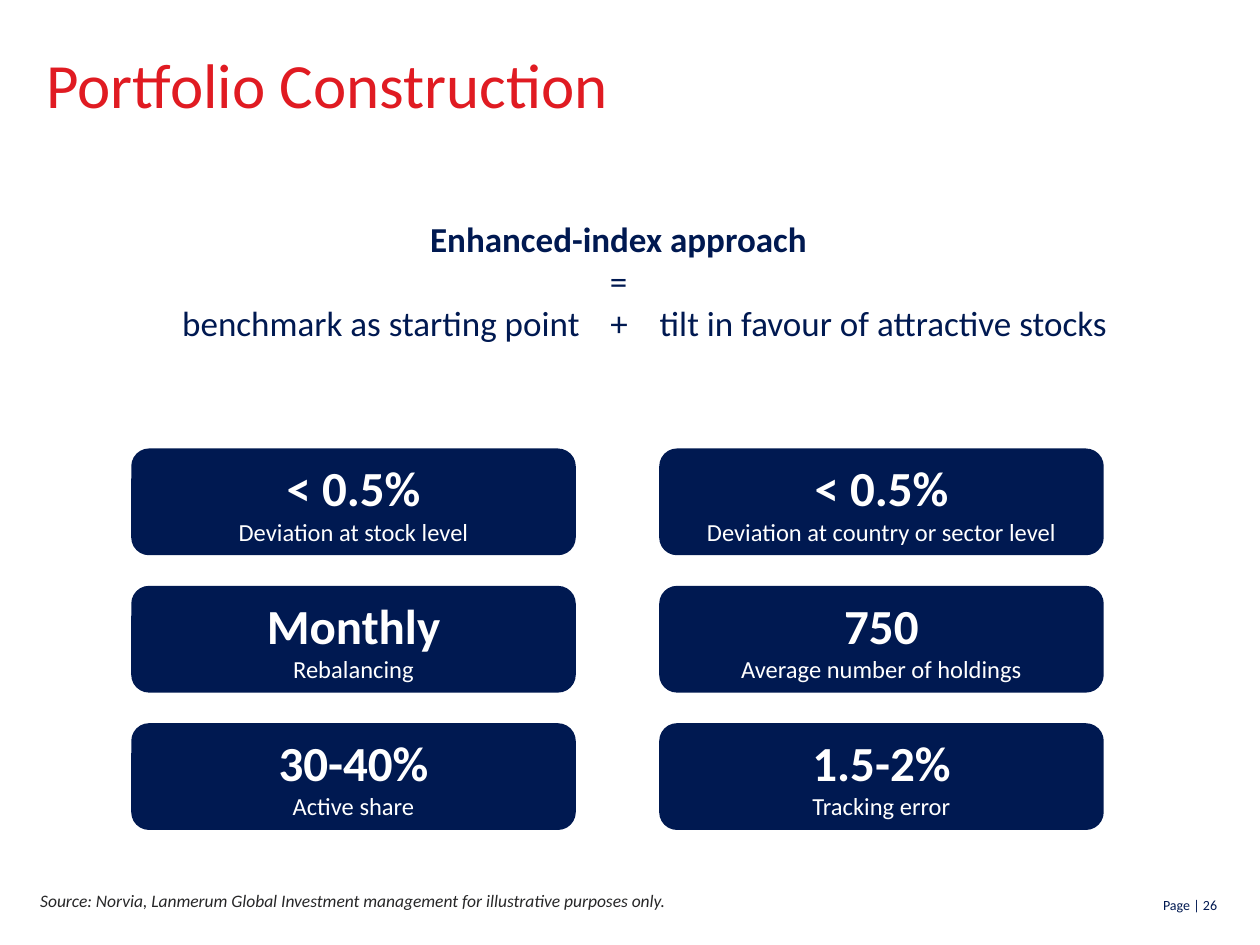
from dataclasses import dataclass

from lxml.etree import SubElement
from pptx import Presentation
from pptx.dml.color import RGBColor
from pptx.enum.shapes import MSO_SHAPE as Shape
from pptx.enum.text import MSO_ANCHOR as Anchor, MSO_AUTO_SIZE as AutoSize, PP_ALIGN as Align
from pptx.oxml.ns import qn
from pptx.util import Pt

COLORS = {"navy": "001951", "red": "E01B22", "white": "FFFFFF", "dark": "272728"}
FONT = "Calibri"
TITLE_ONLY = 5


@dataclass
class Card:
    column: int
    row: int
    figure: str
    label: str


CARDS = [
    Card(0, 0, "< 0.5%", "Deviation at stock level"),
    Card(1, 0, "< 0.5%", "Deviation at country or sector level"),
    Card(0, 1, "Monthly", "Rebalancing"),
    Card(1, 1, "750", "Average number of holdings"),
    Card(0, 2, "30-40%", "Active share"),
    Card(1, 2, "1.5-2%", "Tracking error"),
]
CARD_LEFT, CARD_TOP = 75, 256.3
CARD_WIDTH, CARD_HEIGHT = 254, 61
COLUMN_STEP, ROW_STEP = 301.7, 78.5


def color(name: str) -> RGBColor:
    return RGBColor.from_string(COLORS[name])


def write(frame, text: str, *, size: float, fill: str = "navy", bold: bool = False,
          italic: bool = False, align=Align.CENTER, first: bool = False,
          tabs: tuple = ()) -> None:
    para = frame.paragraphs[0] if first else frame.add_paragraph()
    para.alignment = align
    if first:
        para.space_before = Pt(0)
    if tabs:
        tab_list = SubElement(para._p.get_or_add_pPr(), qn("a:tabLst"))
        for position in tabs:
            SubElement(tab_list, qn("a:tab"), pos=str(Pt(position)), algn="ctr")
    span = para.add_run()
    span.text = text
    font = span.font
    font.name, font.size, font.bold, font.italic = FONT, Pt(size), bold, italic
    font.color.rgb = color(fill)


def clear_margins(frame) -> None:
    frame.margin_left = frame.margin_right = frame.margin_top = frame.margin_bottom = 0


def add_box(page, left: float, top: float, width: float, height: float, wrap: bool = True):
    box = page.shapes.add_textbox(Pt(left), Pt(top), Pt(width), Pt(height))
    box.text_frame.word_wrap = wrap
    return box.text_frame


def add_title(page, text: str) -> None:
    title = page.shapes.title
    title.left, title.top, title.width, title.height = Pt(26.6), Pt(26), Pt(629.3), Pt(71.3)
    frame = title.text_frame
    clear_margins(frame)
    frame.vertical_anchor = Anchor.TOP
    frame.auto_size = AutoSize.NONE
    write(frame, text, size=36, fill="red", align=Align.LEFT, first=True)


def add_card(page, card: Card) -> None:
    box = page.shapes.add_shape(
        Shape.ROUNDED_RECTANGLE,
        Pt(CARD_LEFT + card.column * COLUMN_STEP), Pt(CARD_TOP + card.row * ROW_STEP),
        Pt(CARD_WIDTH), Pt(CARD_HEIGHT))
    box.shadow.inherit = False
    box.fill.solid()
    box.fill.fore_color.rgb = color("navy")
    box.line.fill.background()
    frame = box.text_frame
    frame.word_wrap = True
    frame.vertical_anchor = Anchor.MIDDLE
    write(frame, card.figure, size=28, fill="white", bold=True, first=True)
    write(frame, card.label, size=14, fill="white")


def main() -> None:
    deck = Presentation()
    deck.slide_width, deck.slide_height = Pt(720), Pt(540)
    page = deck.slides.add_slide(deck.slide_layouts[TITLE_ONLY])
    add_title(page, "Portfolio Construction")

    approach = add_box(page, 18.7, 121, 669.6, 80)
    write(approach, "Enhanced-index approach", size=20, bold=True, first=True)
    write(approach, "=", size=20)
    write(approach, "\tbenchmark as starting point\t+\ttilt in favour of attractive stocks",
          size=20, align=Align.LEFT, tabs=(192, 328, 479))

    for card in CARDS:
        add_card(page, card)

    source = add_box(page, 23, 508.3, 665.3, 12.2)
    clear_margins(source)
    write(source, "Source: Norvia, Lanmerum Global Investment management for illustrative "
          "purposes only.", size=10, fill="dark", italic=True, align=Align.LEFT, first=True)

    number = add_box(page, 655.9, 509, 46.8, 17.3, wrap=False)
    write(number, "Page | 26", size=8, align=Align.RIGHT, first=True)
    deck.save("out.pptx")


if __name__ == "__main__":
    main()
